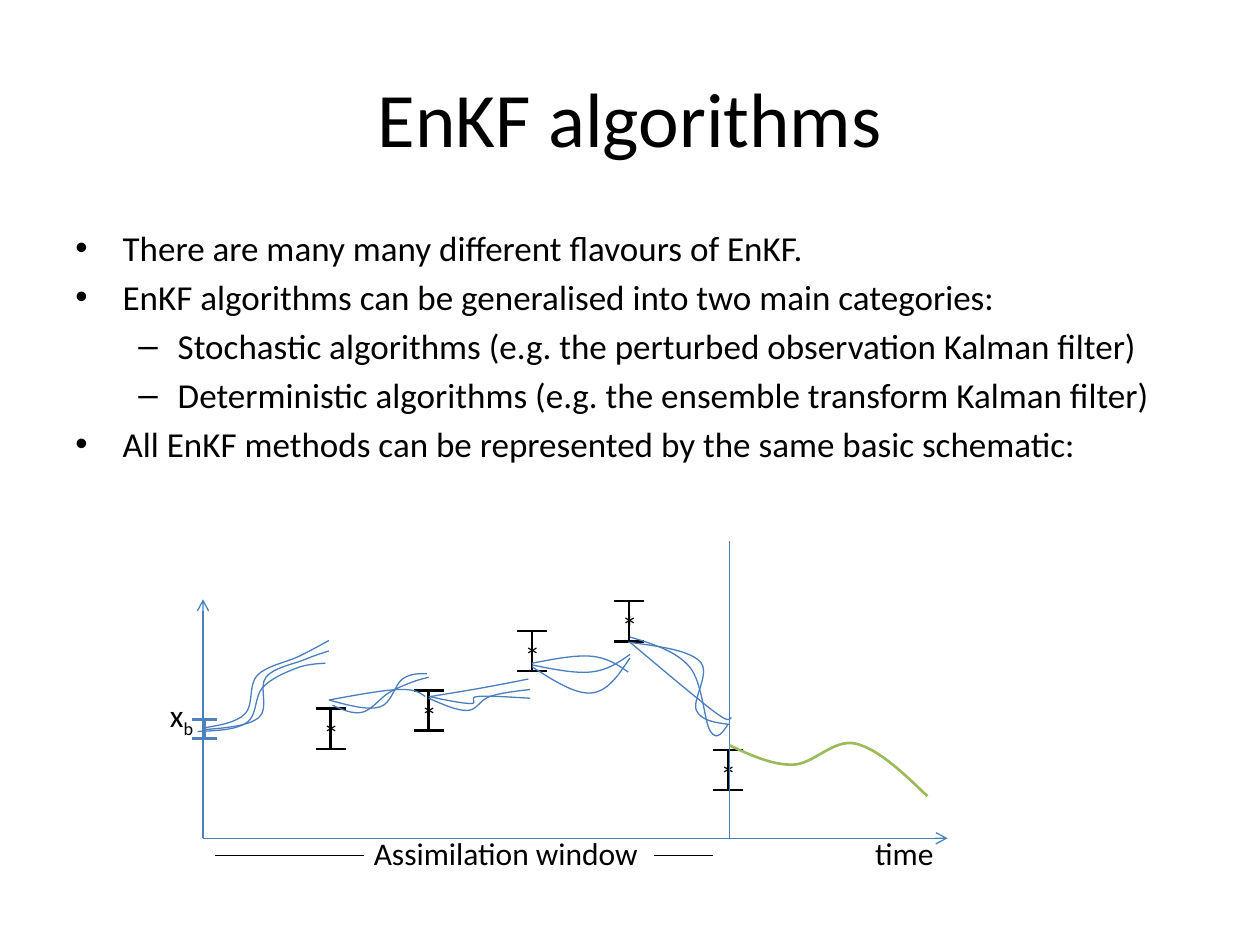
from lxml.etree import SubElement
from pptx import Presentation
from pptx.dml.color import RGBColor
from pptx.enum.shapes import MSO_CONNECTOR as Connector
from pptx.enum.text import MSO_ANCHOR as Anchor, PP_ALIGN as Align
from pptx.oxml.ns import qn
from pptx.util import Pt

COLORS = {"text": "000000", "axis": "4B7EBC", "background": "4F81BD", "forecast": "9BBB59"}
FONT = "Calibri"

BULLETS = [
    (0, "There are many many different flavours of EnKF."),
    (0, "EnKF algorithms can be generalised into two main categories:"),
    (1, "Stochastic algorithms (e.g. the perturbed observation Kalman filter)"),
    (1, "Deterministic algorithms (e.g. the ensemble transform Kalman filter)"),
    (0, "All EnKF methods can be represented by the same basic schematic:"),
]
# Per level: bullet sign, left margin, hanging indent
BULLET_STYLES = [("•", 27, 27), ("–", 58.5, 22.5)]

# Centre and top of each observation's error bar
OBSERVATIONS = [(245, 394.5), (189, 405), (304, 360.5), (416, 428.5), (359.5, 343.5)]

# Points that each ensemble member passes through, by stretch between observations
MEMBERS = [
    [(116, 416), (140, 408), (147, 386), (171, 375), (188, 366)],
    [(113, 418), (141, 413), (150, 393), (169, 382), (186, 379)],
    [(116, 417), (148, 410), (152, 387), (174, 377), (188, 372)],

    [(188, 400), (217, 404), (230, 388), (244, 385)],
    [(190, 403), (207, 407), (222, 396), (235, 390), (245, 387)],
    [(188, 400), (228, 394), (243, 398)],

    [(246, 398), (276, 393), (302, 388)],
    [(245, 399), (267, 406), (280, 398), (303, 394)],
    [(245, 398), (269, 402), (273, 398), (303, 399)],

    [(304, 379), (338, 375), (359, 384)],
    [(304, 381), (338, 396), (360, 376)],
    [(304, 380), (338, 384), (360, 374)],

    [(360, 364), (394, 381), (406, 418), (416, 414)],
    [(359, 367), (400, 378), (398, 406), (417, 414)],
    [(360, 367), (396, 397), (413, 410), (418, 410)],
]
FORECAST = [(417, 426), (453, 437), (489, 425), (530, 455)]


def color(name):
    return RGBColor.from_string(COLORS[name])


def style_text(para, size):
    for span in para.runs:
        span.font.name = FONT
        span.font.size = Pt(size)
        span.font.color.rgb = color("text")


def add_text(page, text, left, top, width, height=29, size=18, wrap=False):
    box = page.shapes.add_textbox(Pt(left), Pt(top), Pt(width), Pt(height))
    frame = box.text_frame
    frame.word_wrap = wrap
    frame.text = text
    for para in frame.paragraphs:
        style_text(para, size)
    return frame


def add_title(page, text):
    frame = add_text(page, text, 36, 21.6, 648, 90, 44, True)
    frame.vertical_anchor = Anchor.MIDDLE
    frame.paragraphs[0].alignment = Align.CENTER


def add_bullets(page, items):
    text = "\n".join(text for _, text in items)
    frame = add_text(page, text, 36, 126, 648, 356.4, 20, True)
    for para, (level, _) in zip(frame.paragraphs, items):
        para.level = level
        para.space_before = Pt(4)
        sign, margin, hanging = BULLET_STYLES[level]
        properties = para._p.get_or_add_pPr()
        properties.set("marL", str(Pt(margin)))
        properties.set("indent", str(-Pt(hanging)))
        SubElement(properties, qn("a:buFont"), typeface="Arial")
        SubElement(properties, qn("a:buChar"), char=sign)


def add_line(shapes, start, end, tone, width=0.75, arrow=False):
    points = [Pt(value) for value in (*start, *end)]
    line = shapes.add_connector(Connector.STRAIGHT, *points)
    line.line.color.rgb = color(tone)
    line.line.width = Pt(width)
    if arrow:
        SubElement(line.line._get_or_add_ln(), qn("a:tailEnd"), type="arrow")
    SubElement(line._element.spPr, qn("a:effectLst"))


def add_error_bar(page, x, top, height=23, half=8.5, tone="text"):
    """Draw a grouped stem with a cap at either end."""
    shapes = page.shapes.add_group_shape().shapes
    bottom = top + height
    add_line(shapes, (x, top), (x, bottom), tone, 1.5)
    for y in (top, bottom):
        add_line(shapes, (x - half, y), (x + half, y), tone, 1.5)


def spline(knots):
    """Put two control points between neighbouring knots, for a smooth curve."""
    def shift(index, sign):
        (x, y), before, after = knots[index], knots[index - 1], knots[index + 1]
        return x + sign * (after[0] - before[0]) / 6, y + sign * (after[1] - before[1]) / 6

    def middle(first, second):
        return (first[0] + second[0]) / 2, (first[1] + second[1]) / 2

    last = len(knots) - 1
    points = [knots[0], middle(knots[0], shift(1, -1))]
    for index in range(1, last):
        points += [shift(index, -1), knots[index], shift(index, 1)]
    return points + [middle(knots[last], shift(last - 1, 1)), knots[last]]


def add_curve(page, knots, tone, width=0.75):
    """Draw a polyline through all spline points, then turn each three steps into a Bézier."""
    points = [(Pt(x), Pt(y)) for x, y in spline(knots)]
    builder = page.shapes.build_freeform(*points[0])
    builder.add_line_segments(points[1:], close=False)
    curve = builder.convert_to_shape()
    curve.shadow.inherit = False
    curve.fill.background()
    curve.line.color.rgb = color(tone)
    curve.line.width = Pt(width)
    outline = next(curve._element.iter(qn("a:path")))
    steps = outline.findall(qn("a:lnTo"))
    for first in range(0, len(steps), 3):
        bezier = SubElement(outline, qn("a:cubicBezTo"))
        for step in steps[first:first + 3]:
            bezier.append(step[0])
            outline.remove(step)


def add_axes(page):
    origin = (116, 479)
    add_line(page.shapes, origin, (116, 342.5), "axis", arrow=True)
    add_line(page.shapes, origin, (541.5, 479), "axis", arrow=True)
    add_line(page.shapes, (417, 479), (417, 309), "axis")
    add_text(page, "time", 493, 473, 48)
    label = add_text(page, "x", 90, 394, 29).paragraphs[0]
    subscript = label.add_run()
    subscript.text = "b"
    style_text(label, 18)
    subscript.font._element.set("baseline", "-25000")


def add_window_label(page):
    add_text(page, "Assimilation window", 206.5, 473, 167)
    for left, right in ((123, 208), (373.5, 407.5)):
        add_line(page.shapes, (left, 489), (right, 489), "text")


def main():
    deck = Presentation()
    deck.slide_width, deck.slide_height = Pt(720), Pt(540)
    page = deck.slides.add_slide(deck.slide_layouts[6])
    for x, top in OBSERVATIONS:
        add_text(page, "*", x - 11.3, top, 24)
        add_error_bar(page, x, top)
    add_title(page, "EnKF algorithms")
    add_bullets(page, BULLETS)
    add_axes(page)
    add_window_label(page)
    add_curve(page, FORECAST, "forecast", 1.5)
    add_error_bar(page, 116.75, 411, 11, 7.25, "background")
    for member in MEMBERS:
        add_curve(page, member, "axis")
    deck.save("out.pptx")


if __name__ == "__main__":
    main()
